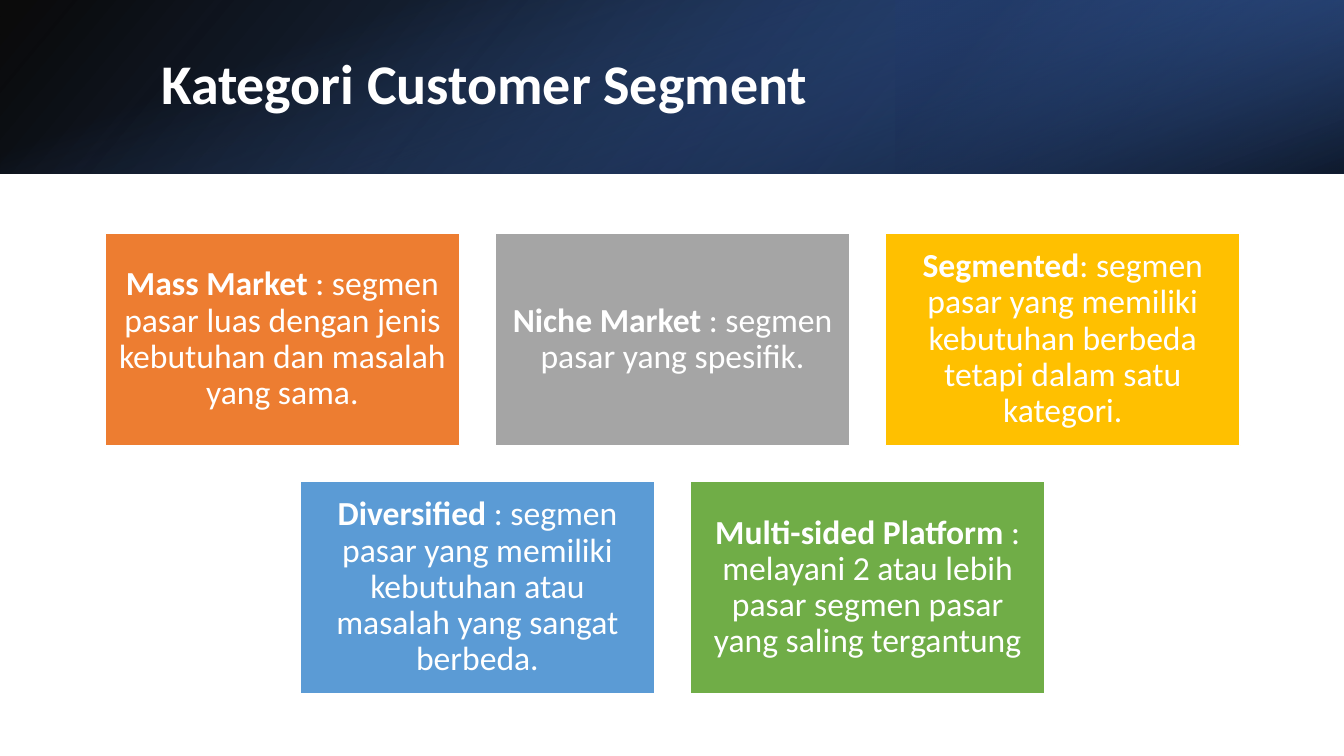
"""Build the customer segment category slide."""
import dataclasses

import lxml.etree
import pptx
import pptx.dml.color
import pptx.enum.shapes
import pptx.enum.text
import pptx.oxml.ns
import pptx.util

Pt = pptx.util.Pt
qn = pptx.oxml.ns.qn

COLORS = {
    "white": "FFFFFF",
    "black": "000000",
    "deep_blue": "2F5597",
    "navy": "203864",
    "blue": "4472C4",
    "orange": "ED7D31",
    "grey": "A5A5A5",
    "gold": "FFC000",
    "sky": "5B9BD5",
    "green": "70AD47",
}

SLIDE_W, SLIDE_H = 960, 540
HEADER_H = 124
CARD_W, CARD_H, CARD_GAP = 253.4, 152, 25.3
CARDS_TOP, CARDS_CENTER = 166.4, 480.4

TITLE_FONT = {"name": "Calibri", "size": Pt(40), "bold": True}
TERM_FONT = {"name": "Calibri", "size": Pt(24), "bold": True}
MEANING_FONT = {**TERM_FONT, "bold": False}
FRAME_FORMAT = {
    "word_wrap": True,
    "vertical_anchor": pptx.enum.text.MSO_ANCHOR.MIDDLE,
}
CARD_FRAME_FORMAT = {
    **FRAME_FORMAT,
    "margin_left": Pt(7.2),
    "margin_right": Pt(7.2),
    "margin_top": Pt(7.2),
    "margin_bottom": Pt(7.2),
}


@dataclasses.dataclass(frozen=True)
class Stop:
    position: float
    color: str
    alpha: int


@dataclasses.dataclass(frozen=True)
class Band:
    left: float
    top: float
    width: float
    height: float
    stops: tuple[Stop, Stop]
    angle: int
    rotation: int = 0
    flipped: bool = False


@dataclasses.dataclass(frozen=True)
class Segment:
    term: str
    meaning: str
    color: str


BANDS = [
    Band(0, 0, SLIDE_W, HEADER_H,
         (Stop(0, "black", 96), Stop(1, "deep_blue", 100)), 140, flipped=True),
    Band(640, 0, 320, HEADER_H,
         (Stop(0.19, "navy", 68), Stop(1, "blue", 79)), 320, 180, True),
    Band((SLIDE_W - HEADER_H) / 2, (HEADER_H - SLIDE_W) / 2, HEADER_H, SLIDE_W,
         (Stop(0.23, "blue", 0), Stop(0.99, "black", 74)), 340, 90),
]

SEGMENT_ROWS = [
    [
        Segment("Mass Market ",
                ": segmen pasar luas dengan jenis kebutuhan dan masalah yang sama.",
                "orange"),
        Segment("Niche Market ", ": segmen pasar yang spesifik.", "grey"),
        Segment("Segmented",
                ": segmen pasar yang memiliki kebutuhan berbeda tetapi dalam satu kategori.",
                "gold"),
    ],
    [
        Segment("Diversified",
                " : segmen pasar yang memiliki kebutuhan atau masalah yang sangat berbeda.",
                "sky"),
        Segment("Multi-sided Platform ",
                ": melayani 2 atau lebih pasar segmen pasar yang saling tergantung",
                "green"),
    ],
]


def rgb(name: str) -> pptx.dml.color.RGBColor:
    return pptx.dml.color.RGBColor.from_string(COLORS[name])


def apply_format(target: object, values: dict) -> None:
    for attribute, value in values.items():
        setattr(target, attribute, value)


def add_rectangle(slide, left: float, top: float, width: float, height: float):
    rectangle = slide.shapes.add_shape(
        pptx.enum.shapes.MSO_SHAPE.RECTANGLE,
        Pt(left), Pt(top), Pt(width), Pt(height))
    rectangle.shadow.inherit = False
    return rectangle


def add_run(paragraph, text: str, font_format: dict) -> None:
    run = paragraph.add_run()
    run.text = text
    apply_format(run.font, font_format)
    run.font.color.rgb = rgb("white")


def draw_band(slide, band: Band) -> None:
    rectangle = add_rectangle(slide, band.left, band.top, band.width, band.height)
    rectangle.rotation = band.rotation
    rectangle.line.fill.background()
    rectangle.fill.gradient()
    rectangle.fill.gradient_angle = 360 - band.angle
    properties = rectangle.element.spPr
    if band.flipped:
        properties.find(qn("a:xfrm")).set("flipH", "1")
    for gradient_stop, stop in zip(rectangle.fill.gradient_stops, band.stops):
        gradient_stop.position = stop.position
        gradient_stop.color.rgb = rgb(stop.color)
    for color, stop in zip(properties.iter(qn("a:srgbClr")), band.stops):
        alpha = lxml.etree.SubElement(color, qn("a:alpha"))
        alpha.set("val", str(stop.alpha * 1000))


def draw_title(slide, text: str) -> None:
    title = slide.shapes.add_textbox(Pt(108), Pt(27.4), Pt(790.6), Pt(69))
    apply_format(title.text_frame, FRAME_FORMAT)
    paragraph = title.text_frame.paragraphs[0]
    paragraph.line_spacing = 0.9
    add_run(paragraph, text, TITLE_FONT)


def draw_segment(slide, segment: Segment, left: float, top: float) -> None:
    card = add_rectangle(slide, left, top, CARD_W, CARD_H)
    card.fill.solid()
    card.fill.fore_color.rgb = rgb(segment.color)
    card.line.color.rgb = rgb("white")
    card.line.width = Pt(1)
    apply_format(card.text_frame, CARD_FRAME_FORMAT)
    paragraph = card.text_frame.paragraphs[0]
    apply_format(paragraph, {"alignment": pptx.enum.text.PP_ALIGN.CENTER,
                             "line_spacing": 0.9})
    add_run(paragraph, segment.term, TERM_FONT)
    add_run(paragraph, segment.meaning, MEANING_FONT)


def main() -> None:
    deck = pptx.Presentation()
    deck.slide_width, deck.slide_height = Pt(SLIDE_W), Pt(SLIDE_H)
    slide = deck.slides.add_slide(deck.slide_layouts[6])
    for band in BANDS:
        draw_band(slide, band)
    draw_title(slide, "Kategori Customer Segment")
    for row, segments in enumerate(SEGMENT_ROWS):
        row_width = len(segments) * (CARD_W + CARD_GAP) - CARD_GAP
        row_left = CARDS_CENTER - row_width / 2
        top = CARDS_TOP + row * (CARD_H + CARD_GAP)
        for column, segment in enumerate(segments):
            draw_segment(slide, segment, row_left + column * (CARD_W + CARD_GAP), top)
    deck.save("out.pptx")


if __name__ == "__main__":
    main()
